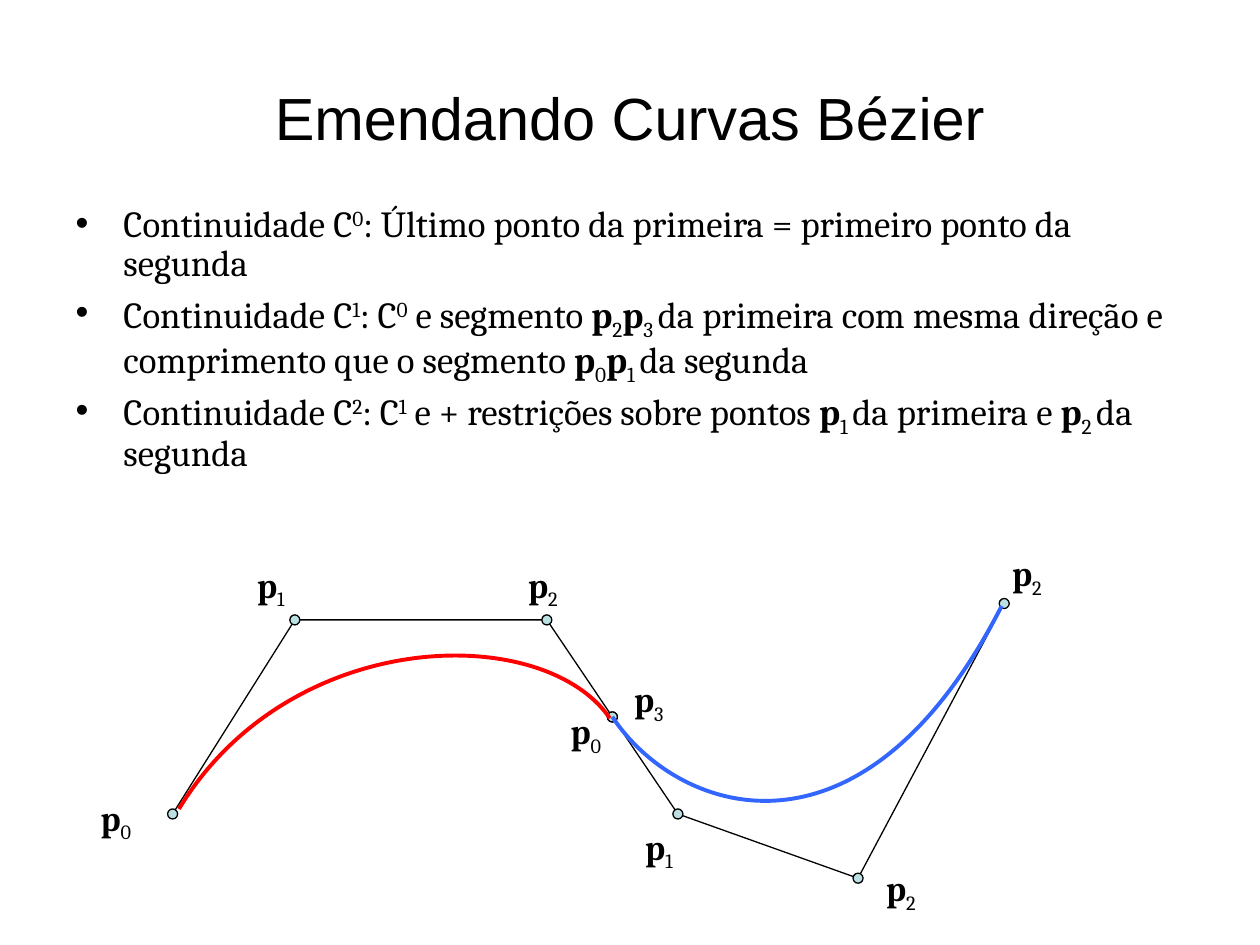
from dataclasses import dataclass

from lxml import etree
from pptx import Presentation
from pptx.dml.color import RGBColor
from pptx.enum import shapes, text
from pptx.oxml import ns
from pptx.util import Inches, Pt


@dataclass(frozen=True)
class Theme:
    """Colours, fonts and type sizes of the slide."""
    ink: RGBColor = RGBColor(0, 0, 0)
    dot: RGBColor = RGBColor(0xBB, 0xE0, 0xE3)
    first: RGBColor = RGBColor(0xFF, 0, 0)
    second: RGBColor = RGBColor(0x33, 0x66, 0xFF)
    heading: str = "Arial"
    serif: str = "Cambria"
    title: int = 34
    body: int = 21
    label: int = 20
    thin: float = 0.75
    thick: float = 2.25


THEME = Theme()
DOT = 0.08
LABEL = (0.46, 0.43)
BASELINES = {"^": "30000", "_": "-25000"}

BULLETS = [
    "Continuidade C|^0|: Último ponto da primeira = primeiro ponto da segunda",
    "Continuidade C|^1|: C|^0| e segmento |*p|_2|*p|_3 |da primeira com mesma "
    "direção e comprimento que o segmento |*p|_0|*p|_1 |da segunda",
    "Continuidade C|^2|: C|^1| e + restrições sobre pontos |*p|_1 |"
    "da primeira e |*p|_2 |da segunda",
]
FIRST_POINTS = [(0.68, 2.13), (1.65, 0.59), (3.65, 0.59), (4.17, 1.36)]
FIRST_CURVE = [(0.73, 2.09), (1.61, 0.64), (3.62, 0.6), (4.15, 1.37)]
SECOND_POINTS = [(7.28, 0.46), (6.12, 2.64), (4.69, 2.13), (4.17, 1.36)]
SECOND_CURVE = [(7.26, 0.48), (6.15, 2.65), (4.68, 2.13), (4.17, 1.36)]
LABELS = [
    ("0", 0, 1.94), ("1", 1.23, 0.09), ("2", 3.39, 0.09), ("2", 7.23, 0),
    ("3", 4.23, 1), ("0", 3.73, 1.25), ("1", 4.31, 2.17), ("2", 6.23, 2.5),
]


def place(sp, box):
    """Move and size a shape to a box in inches."""
    sp.left, sp.top, sp.width, sp.height = map(Inches, box)


def style_run(r, font, size):
    """Give a run its font, size and ink colour."""
    r.font.name, r.font.size = font, Pt(size)
    r.font.color.rgb = THEME.ink


def add_marked_text(p, marked, size):
    """Add runs split at bars: * is bold, ^ is superscript, _ is subscript."""
    for piece in marked.split("|"):
        mark = piece[0] if piece[0] in "*^_" else ""
        r = p.add_run()
        r.text = piece[len(mark):]
        style_run(r, THEME.serif, size)
        r.font.bold = mark == "*"
        if mark in BASELINES:
            r.font._element.set("baseline", BASELINES[mark])


def add_title(s, box):
    """Fill the title placeholder."""
    sp = s.shapes.title
    place(sp, box)
    tf = sp.text_frame
    tf.text = "Emendando Curvas Bézier"
    tf.auto_size = text.MSO_AUTO_SIZE.NONE
    tf.vertical_anchor = text.MSO_ANCHOR.MIDDLE
    p = tf.paragraphs[0]
    p.alignment = text.PP_ALIGN.CENTER
    style_run(p.runs[0], THEME.heading, THEME.title)


def add_bullets(s, box):
    """Fill the body placeholder with the continuity conditions."""
    sp = s.placeholders[1]
    place(sp, box)
    tf = sp.text_frame
    tf.auto_size = text.MSO_AUTO_SIZE.NONE
    for i, marked in enumerate(BULLETS):
        p = tf.add_paragraph() if i else tf.paragraphs[0]
        p.line_spacing = 0.9
        pPr = p._p.get_or_add_pPr()
        pPr.set("marL", str(Inches(0.38)))
        pPr.set("indent", str(-Inches(0.38)))
        add_marked_text(p, marked, THEME.body)


def add_path(s, points, color, width):
    """Draw an open line through the points."""
    start, *rest = [(Inches(x), Inches(y)) for x, y in points]
    builder = s.shapes.build_freeform(*start)
    builder.add_line_segments(rest, close=False)
    sp = builder.convert_to_shape()
    sp.shadow.inherit = False
    sp.fill.background()
    sp.line.color.rgb, sp.line.width = color, Pt(width)
    return sp


def add_bezier(s, points, color):
    """Draw one cubic curve from its four control points."""
    sp = add_path(s, points, color, THEME.thick)
    segments = list(sp._element.iter(ns.qn("a:lnTo")))
    path = segments[0].getparent()
    cubic = etree.SubElement(path, ns.qn("a:cubicBezTo"))
    for segment in segments:
        cubic.append(segment[0])
        path.remove(segment)


def add_dot(s, x, y):
    """Mark a control point with a small circle."""
    box = (x - DOT / 2, y - DOT / 2, DOT, DOT)
    sp = s.shapes.add_shape(shapes.MSO_SHAPE.OVAL, *map(Inches, box))
    sp.shadow.inherit = False
    sp.fill.solid()
    sp.fill.fore_color.rgb = THEME.dot
    sp.line.color.rgb, sp.line.width = THEME.ink, Pt(THEME.thin)


def add_label(s, index, x, y):
    """Name a control point with a bold p and its index."""
    tf = s.shapes.add_textbox(*map(Inches, (x, y, *LABEL))).text_frame
    tf.word_wrap = False
    tf.auto_size = text.MSO_AUTO_SIZE.SHAPE_TO_FIT_TEXT
    p = tf.paragraphs[0]
    p.alignment = text.PP_ALIGN.CENTER
    add_marked_text(p, f"*p|_{index}", THEME.label)


def add_diagram(s, left, top):
    """Draw the two joined curves, their control polygons and labels."""
    def shift(points):
        return [(left + x, top + y) for x, y in points]

    for points in (FIRST_POINTS, SECOND_POINTS):
        add_path(s, shift(points), THEME.ink, THEME.thin)
        for x, y in shift(points):
            add_dot(s, x, y)
    for index, x, y in LABELS:
        add_label(s, index, left + x, top + y)
    add_bezier(s, shift(FIRST_CURVE), THEME.first)
    add_bezier(s, shift(SECOND_CURVE), THEME.second)


def main():
    """Build and save the slide."""
    prs = Presentation()
    prs.slide_width, prs.slide_height = Inches(10), Inches(7.5)
    s = prs.slides.add_slide(prs.slide_layouts[1])
    add_title(s, (0.5, 0.3, 9, 1.25))
    add_bullets(s, (0.5, 1.58, 9, 2.58))
    add_diagram(s, 0.69, 4.33)
    prs.save("out.pptx")


if __name__ == "__main__":
    main()
